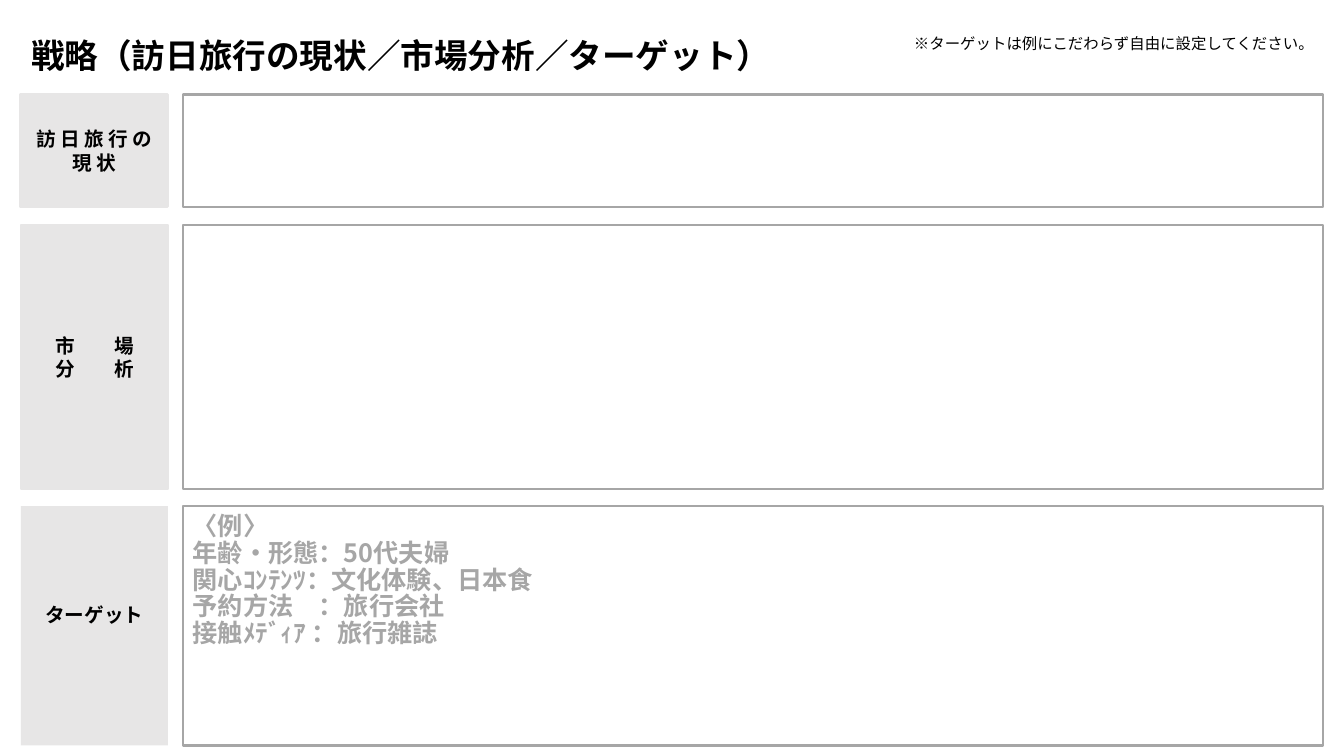
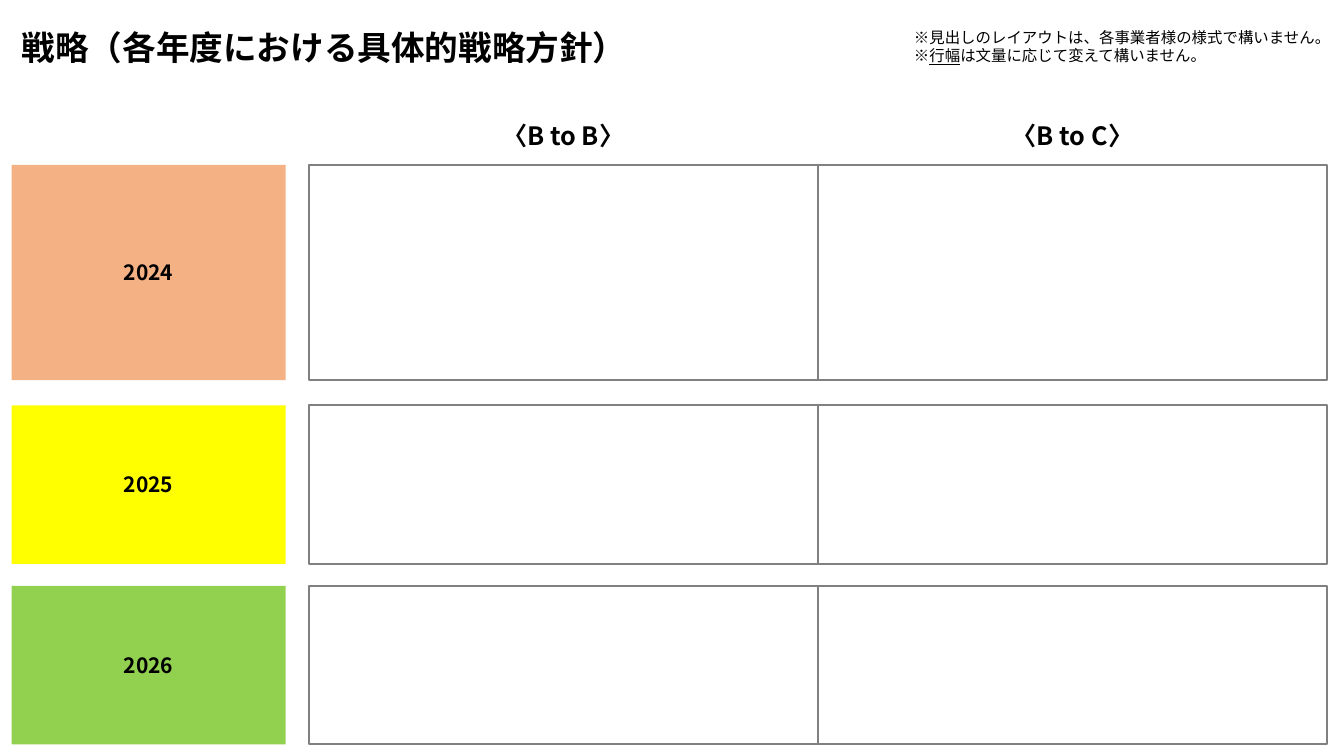
import dataclasses

import pptx
import pptx.dml.color
import pptx.enum.shapes
import pptx.enum.text
import pptx.oxml
import pptx.oxml.ns
import pptx.util

ALIGN = pptx.enum.text.PP_ALIGN
ANCHOR = pptx.enum.text.MSO_ANCHOR


@dataclasses.dataclass(frozen=True)
class Theme:
    font: str = "Noto Sans CJK JP"
    ink: str = "000000"
    paper: str = "FFFFFF"
    label: str = "E7E6E6"
    soft: str = "A6A6A6"
    rule: str = "808080"
    years: tuple = ("F4B183", "FFFF00", "92D050")
    title_size: int = 24
    heading_size: int = 18
    year_size: int = 15
    label_size: int = 14
    note_size: int = 11
    line_width: float = 1.5
    leading: float = 1.2
    tight: float = 1.07


@dataclasses.dataclass(frozen=True)
class Span:
    text: str
    underline: bool = False
    tracking: int = 0


THEME = Theme()


def px(count):
    return pptx.util.Emu(count * 9525)


def rgb(code):
    return pptx.dml.color.RGBColor.from_string(code)


def place(shape, left, top, width, height):
    shape.left, shape.top = px(left), px(top)
    shape.width, shape.height = px(width), px(height)


def style_span(span, size, color, bold):
    span.font.size = pptx.util.Pt(size)
    span.font.name = THEME.font
    span.font.bold = bold
    span.font.color.rgb = rgb(color)
    properties = span._r.get_or_add_rPr()
    east_asian = pptx.oxml.parse_xml(
        f'<a:ea {pptx.oxml.ns.nsdecls("a")} typeface="{THEME.font}"/>'
    )
    properties.find(pptx.oxml.ns.qn("a:latin")).addnext(east_asian)
    return properties


def write(shape, lines, size, color=THEME.ink, bold=True, align=ALIGN.LEFT,
          anchor=ANCHOR.TOP, leading=THEME.leading):
    frame = shape.text_frame
    frame.word_wrap = True
    frame.auto_size = pptx.enum.text.MSO_AUTO_SIZE.NONE
    frame.vertical_anchor = anchor
    for index, line in enumerate(lines):
        para = frame.paragraphs[0] if index == 0 else frame.add_paragraph()
        para.alignment = align
        para.line_spacing = pptx.util.Pt(size * leading)
        para.space_before = pptx.util.Pt(0)
        for part in [Span(line)] if isinstance(line, str) else line:
            span = para.add_run()
            span.text = part.text
            properties = style_span(span, size, color, bold)
            if part.underline:
                span.font.underline = True
            if part.tracking:
                properties.set("spc", str(part.tracking * 100))


def add_title(slide, text, left, top, width):
    title = slide.shapes.title
    place(title, left, top, width, 48)
    write(title, [text], THEME.title_size)


def add_note(slide, lines, top, height):
    box = slide.shapes.add_textbox(px(861), px(top), px(419), px(height))
    write(box, lines, THEME.note_size, bold=False)


def add_panel(slide, left, top, width, height, fill, line, line_width=THEME.line_width):
    panel = slide.shapes.add_shape(
        pptx.enum.shapes.MSO_SHAPE.RECTANGLE, px(left), px(top), px(width), px(height)
    )
    panel.shadow.inherit = False
    panel.fill.solid()
    panel.fill.fore_color.rgb = rgb(fill)
    if line_width:
        panel.line.color.rgb = rgb(line)
        panel.line.width = pptx.util.Pt(line_width)
    else:
        panel.line.fill.background()
    return panel


def add_label(slide, lines, left, top, width, height, fill, size, line_width=0):
    label = add_panel(slide, left, top, width, height, fill, fill, line_width)
    write(label, lines, size, align=ALIGN.CENTER, anchor=ANCHOR.MIDDLE)
    return label


def add_divider(slide, left, top, height):
    divider = slide.shapes.add_connector(
        pptx.enum.shapes.MSO_CONNECTOR.STRAIGHT, px(left), px(top), px(left), px(top + height)
    )
    divider.line.color.rgb = rgb(THEME.rule)
    divider.line.width = pptx.util.Pt(THEME.line_width)
    divider._element.spPr.append(
        pptx.oxml.parse_xml(f'<a:effectLst {pptx.oxml.ns.nsdecls("a")}/>')
    )


def add_heading(slide, text, left, width):
    box = slide.shapes.add_textbox(px(left), px(103), px(width), px(56))
    write(box, [text], THEME.heading_size, align=ALIGN.CENTER,
          anchor=ANCHOR.MIDDLE, leading=THEME.tight)


def fill_body(slide, lines, left, top, width, height):
    body = slide.placeholders[1]
    place(body, left, top, width, height)
    write(body, lines, THEME.heading_size, THEME.soft, leading=THEME.tight)
    for para in body.text_frame.paragraphs:
        properties = para._p.get_or_add_pPr()
        properties.set("marL", "0")
        properties.set("indent", "0")
        properties.append(pptx.oxml.parse_xml(f'<a:buNone {pptx.oxml.ns.nsdecls("a")}/>'))
    slide.shapes._spTree.append(body._element)


def build_analysis(deck):
    slide = deck.slides.add_slide(deck.slide_layouts[1])
    add_title(slide, "戦略（訪日旅行の現状／市場分析／ターゲット）", 20, 28, 800)
    add_note(slide, ["※ターゲットは例にこだわらず自由に設定してください。"], 28, 28)
    rows = [
        (["訪 日 旅 行 の", "現 状"], 90, 107, 2.25),
        ([[Span("市", tracking=28), Span("場")],
          [Span("分", tracking=28), Span("析")]], 214, 252, 1.5),
        (["ターゲット"], 482, 228, 0),
    ]
    for lines, top, height, line_width in rows:
        label = add_label(slide, lines, 20, top, 140, height,
                          THEME.label, THEME.label_size, line_width)
        add_panel(slide, 174, top, 1086, height, THEME.paper, THEME.soft)
    label.text_frame.margin_bottom = px(26)
    fill_body(slide, [
        "〈例〉",
        "年齢・形態：50代夫婦",
        "関心ｺﾝﾃﾝﾂ：文化体験、日本食",
        "予約方法　：旅行会社",
        "接触ﾒﾃﾞｨｱ ：旅行雑誌",
    ], 174, 484, 1086, 220)


def build_policy(deck):
    slide = deck.slides.add_slide(deck.slide_layouts[5])
    add_title(slide, "戦略（各年度における具体的戦略方針）", 11, 21, 796)
    add_note(slide, [
        "※見出しのレイアウトは、各事業者様の様式で構いません。",
        [Span("※"), Span("行幅", underline=True), Span("は文量に応じて変えて構いません。")],
    ], 22, 45)
    left, column = 294, 485
    rows = [("2024", 157, 205), ("2025", 386, 151), ("2026", 558, 151)]
    for (year, top, height), color in zip(rows, THEME.years):
        add_label(slide, [year], 11, top, 261, height, color, THEME.year_size)
        add_panel(slide, left, top, 2 * column, height, THEME.paper, THEME.rule)
        add_divider(slide, left + column, top, height)
    for index, text in enumerate(["〈B to B〉", "〈B to C〉"]):
        add_heading(slide, text, left + index * column, column)


def main():
    deck = pptx.Presentation()
    deck.slide_width, deck.slide_height = px(1280), px(720)
    build_analysis(deck)
    build_policy(deck)
    deck.save("out.pptx")


if __name__ == "__main__":
    main()
